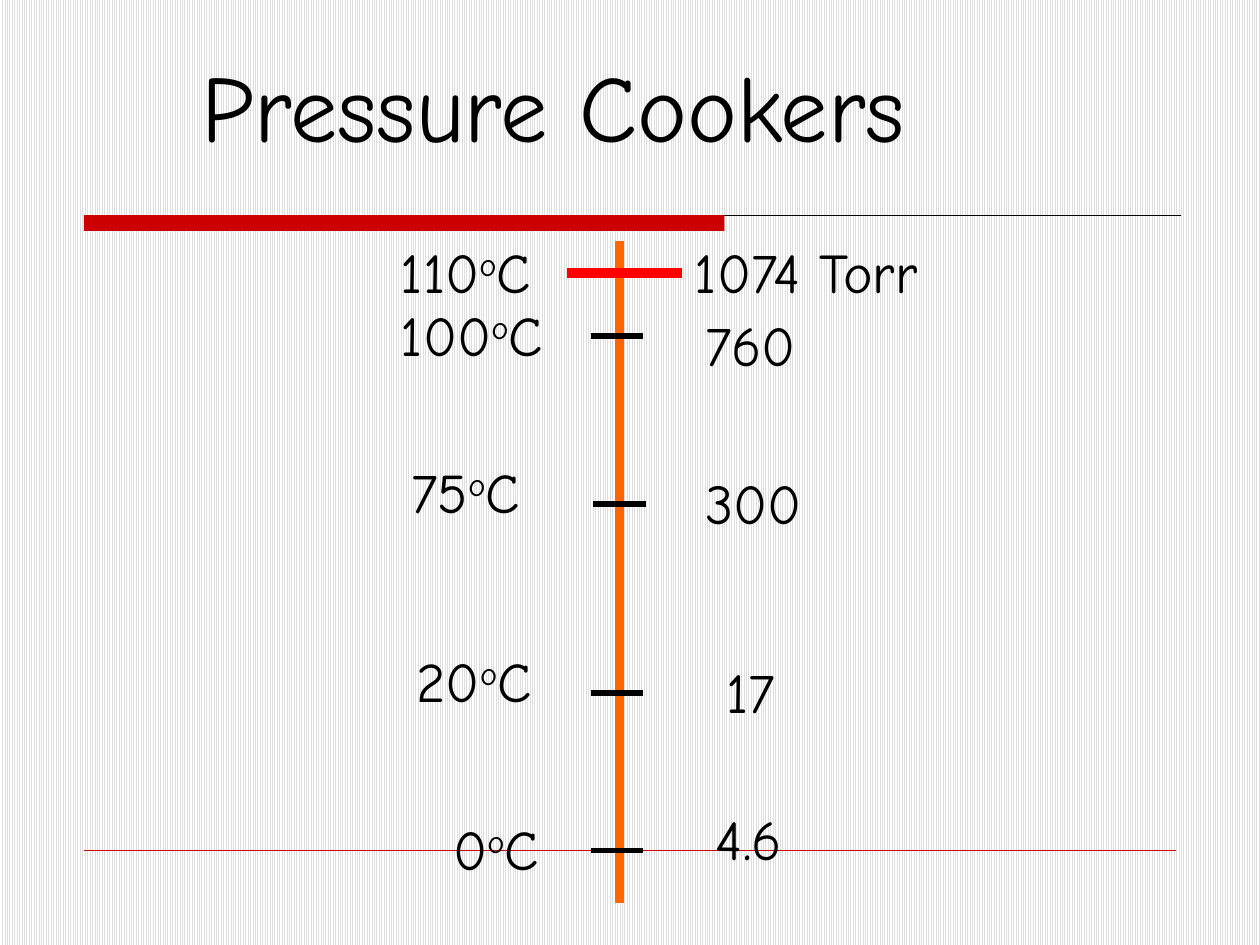
from lxml.etree import SubElement
from pptx import Presentation
from pptx.dml.color import RGBColor
from pptx.enum.dml import MSO_PATTERN
from pptx.enum.shapes import MSO_CONNECTOR, MSO_SHAPE
from pptx.enum.text import MSO_ANCHOR, MSO_AUTO_SIZE, PP_ALIGN
from pptx.oxml.ns import qn
from pptx.util import Inches, Pt

THEME = {
    "font": "Comic Neue",
    "title_size": 54,
    "label_size": 32,
    "text": RGBColor(0x00, 0x00, 0x00),
    "hatch": RGBColor(0xDD, 0xDD, 0xDD),
    "paper": RGBColor(0xFF, 0xFF, 0xFF),
    "rule": RGBColor(0xCC, 0x00, 0x00),
    "hairline": RGBColor(0x00, 0x00, 0x00),
    "axis": RGBColor(0xFF, 0x66, 0x00),
    "marker": RGBColor(0xFF, 0x00, 0x00),
}

presentation = Presentation()
presentation.slide_width = Inches(10)
presentation.slide_height = Inches(7.5)
COLUMN = presentation.slide_width / 240
ROW = presentation.slide_height / 180

slide = presentation.slides.add_slide(presentation.slide_layouts[5])
background = slide.background.fill
background.patterned()
background.pattern = MSO_PATTERN.NARROW_VERTICAL
background.fore_color.rgb = THEME["hatch"]
background.back_color.rgb = THEME["paper"]


def write(text, column, row, columns, rows=15, size=THEME["label_size"], shape=None):
    """Write text at a grid cell; the part after a degree mark "^o" is normal again."""
    box = (int(column * COLUMN), int(row * ROW), int(columns * COLUMN), int(rows * ROW))
    if shape is None:
        shape = slide.shapes.add_textbox(*box)
    shape.left, shape.top, shape.width, shape.height = box
    frame = shape.text_frame
    frame.word_wrap = True
    frame.auto_size = MSO_AUTO_SIZE.SHAPE_TO_FIT_TEXT
    frame.vertical_anchor = MSO_ANCHOR.TOP
    paragraph = frame.paragraphs[0]
    paragraph.alignment = PP_ALIGN.LEFT
    # Space before as a share of the type size
    spacing = SubElement(paragraph._p.get_or_add_pPr(), qn("a:spcBef"))
    SubElement(spacing, qn("a:spcPct")).set("val", "50000")
    before, degree, after = text.partition("^o")
    for part in filter(None, (before, degree, after)):
        run = paragraph.add_run()
        run.text = part.removeprefix("^")
        run.font.name = THEME["font"]
        run.font.size = Pt(size)
        run.font.color.rgb = THEME["text"]
        if part == degree:
            run.font._element.set("baseline", "30000")


def draw_line(start, end, color, width):
    line = slide.shapes.add_connector(
        MSO_CONNECTOR.STRAIGHT,
        int(start[0] * COLUMN), int(start[1] * ROW),
        int(end[0] * COLUMN), int(end[1] * ROW),
    )
    line.line.color.rgb = THEME[color]
    line.line.width = Pt(width)
    SubElement(line._element.spPr, qn("a:effectLst"))


# Rules below the title and at the foot
draw_line((16, 41), (225, 41), "hairline", 0.75)
title_bar = slide.shapes.add_shape(
    MSO_SHAPE.RECTANGLE,
    int(16 * COLUMN), int(41 * ROW), int(122 * COLUMN), int(3 * ROW),
)
title_bar.shadow.inherit = False
title_bar.fill.solid()
title_bar.fill.fore_color.rgb = THEME["rule"]
title_bar.line.fill.background()
draw_line((16, 162), (224, 162), "rule", 0.25)

# Thermometer axis with its ticks
AXIS = 118
draw_line((AXIS, 46), (AXIS, 172), "axis", 5.5)
for left, row in ((112.5, 52), (112.5, 64), (113, 96), (112.5, 132), (112.5, 162)):
    draw_line((left, row), (left + 10, row), "text", 3)

# Boiling temperatures on the left, vapour pressures on the right
for label in (
    ("110^oC", 74, 44, 36), ("1074 Torr", 130, 44, 66),
    ("100^oC", 74, 56, 38), ("760", 132, 58, 58),
    ("75^oC", 76, 86, 30), ("300", 132, 88, 50),
    ("20^oC", 77, 122, 34), ("17", 136, 124, 46),
    ("0^oC", 84, 154, 26), ("4.6", 134, 152, 40),
):
    write(*label)

draw_line((108, 52), (130, 52), "marker", 6)
write("Pressure Cookers", 36, 8, 186, rows=24,
      size=THEME["title_size"], shape=slide.shapes.title)

presentation.save("out.pptx")
